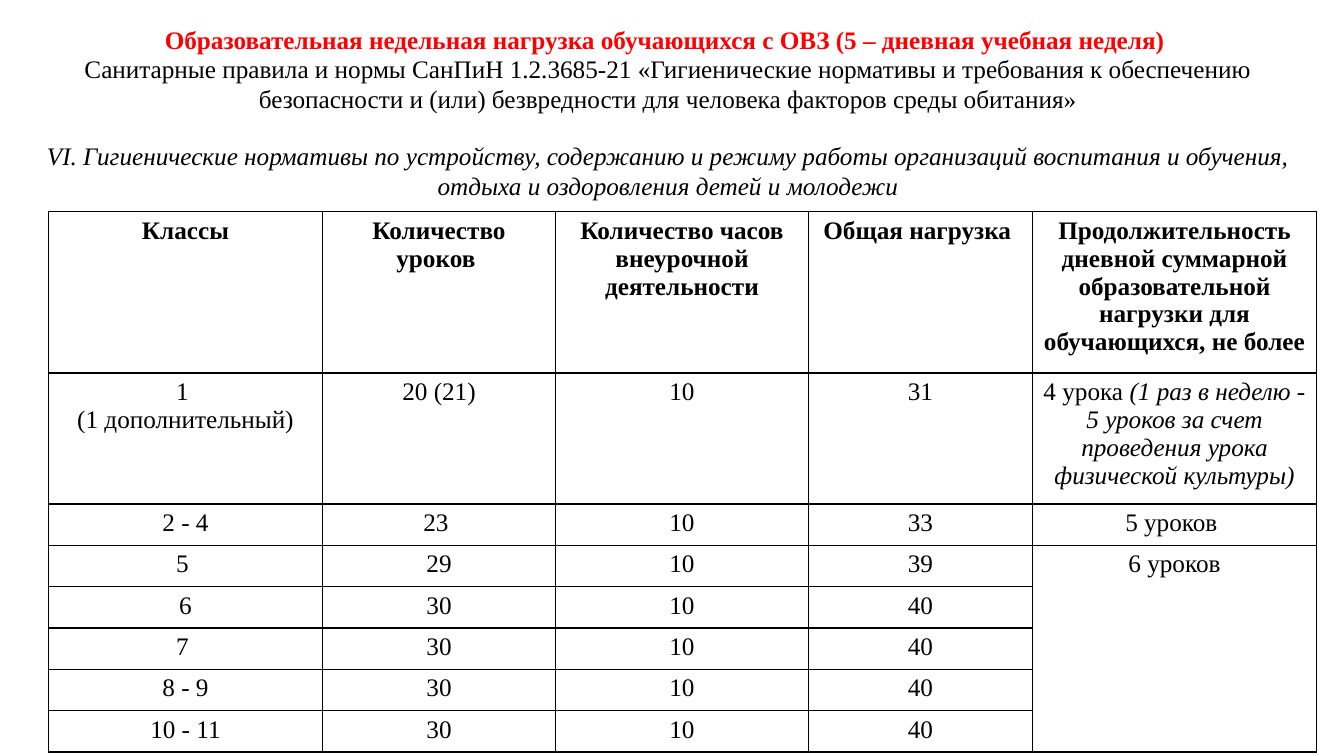
"""Build a slide with the weekly study load table."""
from lxml import etree
from pptx import Presentation
from pptx.dml.color import RGBColor
from pptx.enum.text import MSO_ANCHOR, PP_ALIGN
from pptx.oxml.ns import qn
from pptx.util import Inches, Pt

CENTER = PP_ALIGN.CENTER
MIDDLE = MSO_ANCHOR.MIDDLE
BLACK, RED = "000000", "FF0000"


def color(code):
    """Turn a hex string into a colour."""
    return RGBColor.from_string(code)


def add_text(paragraph, text, size=18, code=BLACK, bold=False, italic=False):
    """Add a formatted run to a centred paragraph."""
    paragraph.alignment = CENTER
    run = paragraph.add_run()
    run.text = text
    run.font.name = "Times New Roman"
    run.font.size = Pt(size)
    run.font.bold = bold
    run.font.italic = italic
    run.font.color.rgb = color(code)


class LoadSlide:
    """Hold the slide and its style."""

    def __init__(self, slide, line_spacing=0.98, border_width=1):
        """Store the slide, line spacing and border width."""
        self.slide = slide
        self.line_spacing = line_spacing
        self.border_width = border_width

    def heading(self, left, top, width, height, entries):
        """Add a text box with one paragraph per entry."""
        box = self.slide.shapes.add_textbox(
            Inches(left), Inches(top), Inches(width), Inches(height))
        frame = box.text_frame
        frame.word_wrap = True
        frame.vertical_anchor = MIDDLE
        for index, (text, space_before, style) in enumerate(entries):
            paragraph = frame.add_paragraph() if index else frame.paragraphs[0]
            paragraph.line_spacing = self.line_spacing
            paragraph.space_before = Pt(space_before)
            add_text(paragraph, text, **style)

    def border(self, cell):
        """Draw all four borders of a cell and clear its fill."""
        properties = cell._tc.get_or_add_tcPr()
        for side in ("a:lnL", "a:lnR", "a:lnT", "a:lnB"):
            line = etree.SubElement(
                properties, qn(side), w=str(Pt(self.border_width)))
            fill = etree.SubElement(line, qn("a:solidFill"))
            etree.SubElement(fill, qn("a:srgbClr"), val=BLACK)
        cell.fill.background()

    def table(self, left, top, widths, heights, rows):
        """Add a bordered table; each cell is a list of paragraphs of runs."""
        table = self.slide.shapes.add_table(
            len(heights), len(widths), Inches(left), Inches(top),
            Inches(sum(widths)), Inches(sum(heights))).table
        table.first_row = table.horz_banding = False
        for column, width in zip(table.columns, widths):
            column.width = Inches(width)
        for row, height in zip(table.rows, heights):
            row.height = Inches(height)
        for r, values in enumerate(rows):
            for c, value in enumerate(values):
                cell = table.cell(r, c)
                self.border(cell)
                frame = cell.text_frame
                for index, runs in enumerate(value):
                    paragraph = frame.add_paragraph() if index else frame.paragraphs[0]
                    for text, style in runs:
                        add_text(paragraph, text, **style)
        return table


def simple_cell(text, **style):
    """Describe a cell with one run, or an empty one."""
    return [[(text, style)]] if text else []


def main():
    """Build and save the slide."""
    presentation = Presentation()
    presentation.slide_width = Inches(13.33)
    presentation.slide_height = Inches(7.5)
    page = LoadSlide(presentation.slides.add_slide(presentation.slide_layouts[6]))

    page.heading(0.27, 0.4, 12.71, 1.45, [
        ("Образовательная недельная нагрузка обучающихся с ОВЗ "
         "(5 – дневная учебная неделя) ", 0, {"code": RED, "bold": True}),
        ("Санитарные правила и нормы СанПиН 1.2.3685-21 «Гигиенические нормативы "
         "и требования к обеспечению безопасности и (или) безвредности для "
         "человека факторов среды обитания»", 0, {}),
        ("VI. Гигиенические нормативы по устройству, содержанию и режиму работы "
         "организаций воспитания и обучения, отдыха и оздоровления детей и "
         "молодежи", 19.5, {"italic": True}),
    ])

    headers = ["Классы", "Количество уроков ",
               "Количество часов внеурочной деятельности", "Общая нагрузка ",
               "Продолжительность дневной суммарной образовательной нагрузки "
               "для обучающихся, не более"]
    first_grade = [
        [[("1 ", {})], [("(1 дополнительный)", {})]],
        simple_cell("20 (21)"), simple_cell("10"), simple_cell("31"),
        [[("4 урока ", {}),
          ("(1 раз в неделю - 5 уроков за счет проведения урока "
           "физической культуры)", {"italic": True})]],
    ]
    other_grades = [
        ("2 - 4", "23 ", "33", "5 уроков "),
        ("5 ", "29", "39", "6 уроков"),
        ("6", "30", "40", ""),
        ("7 ", "30", "40", ""),
        ("8 - 9", "30", "40", ""),
        ("10 - 11", "30", "40", ""),
    ]
    rows = [[simple_cell(text, bold=True) for text in headers], first_grade]
    for grade, lessons, total, limit in other_grades:
        rows.append([simple_cell(text)
                     for text in (grade, lessons, "10", total, limit)])
    heights = [1.48, 1.21] + [0.41] * len(other_grades)
    load = page.table(0.48, 2.1, [2.72, 2.31, 2.51, 2.22, 2.82], heights, rows)
    load.cell(3, 4).merge(load.cell(7, 4))

    presentation.save("out.pptx")


if __name__ == "__main__":
    main()
